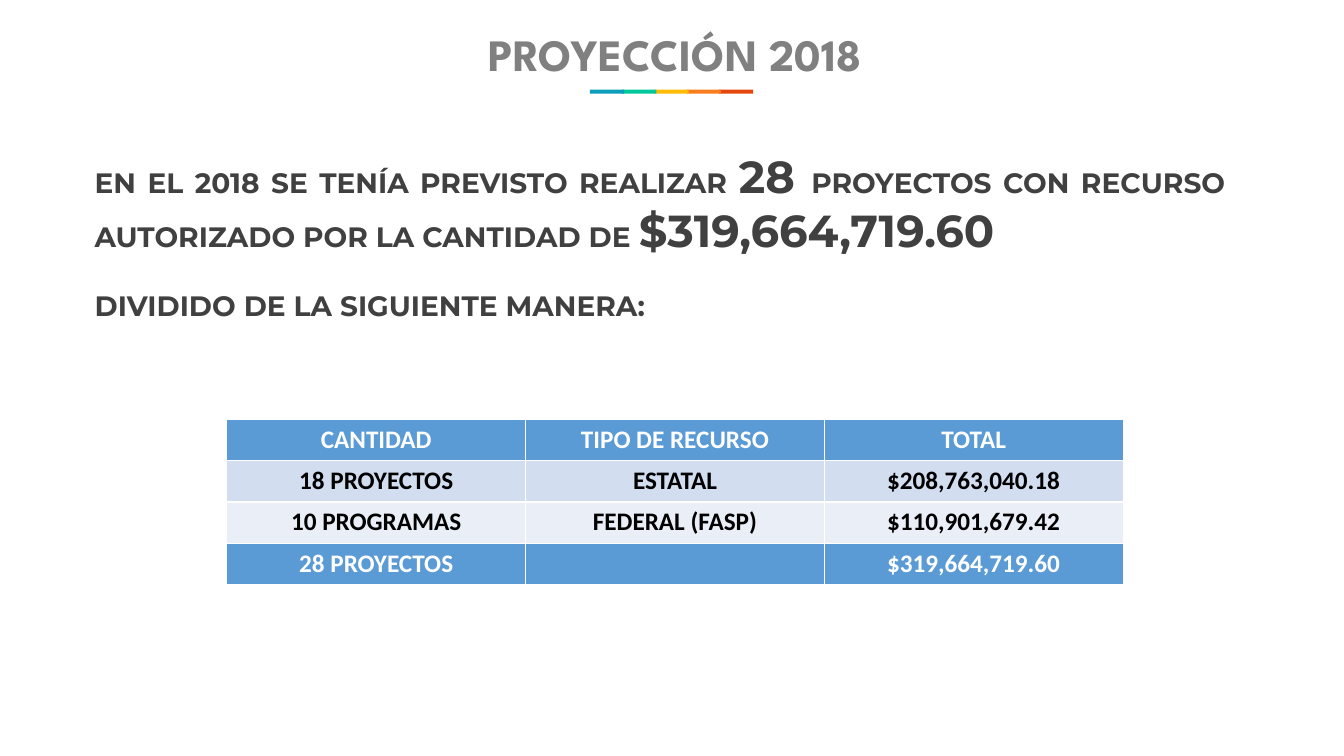
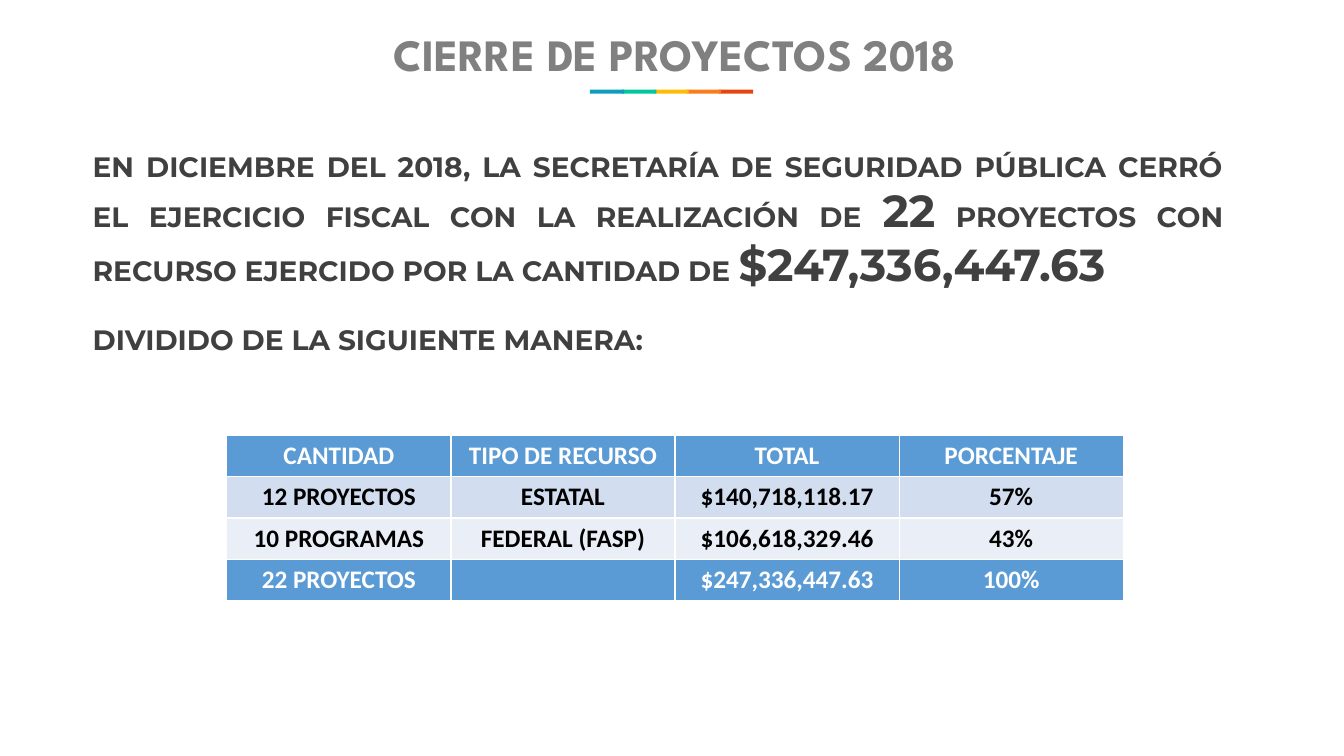
from pptx import Presentation
from pptx.dml.color import RGBColor
from pptx.enum.shapes import MSO_SHAPE
from pptx.enum.text import MSO_ANCHOR, PP_ALIGN
from pptx.util import Inches, Pt

RECTANGLE = MSO_SHAPE.RECTANGLE
MIDDLE = MSO_ANCHOR.MIDDLE
CENTER, JUSTIFY = PP_ALIGN.CENTER, PP_ALIGN.JUSTIFY

WHITE = RGBColor(0xFF, 0xFF, 0xFF)
BLACK = RGBColor(0x00, 0x00, 0x00)
TITLE_GRAY = RGBColor(0x80, 0x80, 0x80)
TEXT_GRAY = RGBColor(0x40, 0x40, 0x40)
TABLE_BLUE = RGBColor(0x5B, 0x9B, 0xD5)
ROW_TINTS = (RGBColor(0xD2, 0xDE, 0xEF), RGBColor(0xEA, 0xEF, 0xF7))
STRIPE_COLORS = (
    RGBColor(0x0D, 0x9E, 0xBB),
    RGBColor(0x00, 0xC8, 0x9D),
    RGBColor(0xFE, 0xBC, 0x07),
    RGBColor(0xF9, 0x7D, 0x1E),
    RGBColor(0xE5, 0x46, 0x0D),
)

TITLE_FONT, BODY_FONT, TABLE_FONT = "League Spartan", "Montserrat", "Calibri"
TITLE_SIZE, BODY_SIZE, FIGURE_SIZE, TABLE_SIZE = 32, 20, 32, 18
PARAGRAPH_GAP = 23

SLIDE_WIDTH, SLIDE_HEIGHT = 13.33, 7.5
STRIPE_LEFT, STRIPE_TOP, STRIPE_STEP = 5.85, 0.89, 0.32
STRIPE_WIDTH, STRIPE_HEIGHT = 0.34, 0.04
TABLE_LEFT, TABLE_WIDTH, ROW_HEIGHT = 2.25, 8.89, 0.41

HEADERS = ("CANTIDAD", "TIPO DE RECURSO", "TOTAL", "PORCENTAJE")
DIVISION_LINE = "DIVIDIDO DE LA SIGUIENTE MANERA:"


def style_run(run, font_name, size, color):
    run.font.name = font_name
    run.font.size = Pt(size)
    run.font.bold = True
    run.font.color.rgb = color


def add_text_box(slide, left, top, width, height):
    box = slide.shapes.add_textbox(
        Inches(left), Inches(top), Inches(width), Inches(height))
    box.text_frame.word_wrap = True
    return box.text_frame


def add_stripes(slide):
    """Colour bar under the title; each piece overlaps the one to its right."""
    for index, color in reversed(list(enumerate(STRIPE_COLORS))):
        stripe = slide.shapes.add_shape(
            RECTANGLE,
            Inches(STRIPE_LEFT + index * STRIPE_STEP), Inches(STRIPE_TOP),
            Inches(STRIPE_WIDTH), Inches(STRIPE_HEIGHT))
        stripe.shadow.inherit = False
        stripe.fill.solid()
        stripe.fill.fore_color.rgb = color
        stripe.line.fill.background()


def add_title(slide, title):
    frame = add_text_box(slide, 1.75, 0.05, 9.89, 0.97)
    frame.vertical_anchor = MIDDLE
    frame.text = title
    para = frame.paragraphs[0]
    para.alignment = CENTER
    style_run(para.runs[0], TITLE_FONT, TITLE_SIZE, TITLE_GRAY)


def add_summary(slide, left, height, pieces):
    """Write text and enlarged figures in turn, then the line before the table."""
    frame = add_text_box(slide, left, 1.43, 11.41, height)
    para = frame.paragraphs[0]
    para.alignment = JUSTIFY
    for index, piece in enumerate(pieces):
        run = para.add_run()
        run.text = piece
        style_run(run, BODY_FONT, FIGURE_SIZE if index % 2 else BODY_SIZE, TEXT_GRAY)

    division = frame.add_paragraph()
    division.text = DIVISION_LINE
    division.alignment = JUSTIFY
    division.space_before = Pt(PARAGRAPH_GAP)
    style_run(division.runs[0], BODY_FONT, BODY_SIZE, TEXT_GRAY)


def fill_cell(cell, text, fill, color):
    cell.fill.solid()
    cell.fill.fore_color.rgb = fill
    cell.text = text
    para = cell.text_frame.paragraphs[0]
    para.alignment = CENTER
    for run in para.runs:
        style_run(run, TABLE_FONT, TABLE_SIZE, color)


def add_resource_table(slide, top, body_rows):
    """Table whose header and last (total) rows are blue."""
    column_count = len(body_rows[0])
    rows = [HEADERS[:column_count], *body_rows]
    table = slide.shapes.add_table(
        len(rows), column_count, Inches(TABLE_LEFT), Inches(top),
        Inches(TABLE_WIDTH), Inches(ROW_HEIGHT * len(rows))).table
    for row_index, row in enumerate(rows):
        if row_index in (0, len(rows) - 1):
            fill, color = TABLE_BLUE, WHITE
        else:
            fill, color = ROW_TINTS[(row_index - 1) % len(ROW_TINTS)], BLACK
        for column_index, text in enumerate(row):
            fill_cell(table.cell(row_index, column_index), text, fill, color)


def add_page(deck, title):
    page = deck.slides.add_slide(deck.slide_layouts[6])
    add_stripes(page)
    add_title(page, title)
    return page


def main():
    deck = Presentation()
    deck.slide_width = Inches(SLIDE_WIDTH)
    deck.slide_height = Inches(SLIDE_HEIGHT)

    projection = add_page(deck, "PROYECCIÓN 2018")
    add_summary(projection, 0.84, 1.85, (
        "EN EL 2018 SE TENÍA PREVISTO REALIZAR ",
        "28 ",
        "PROYECTOS CON RECURSO AUTORIZADO POR LA CANTIDAD DE ",
        "$319,664,719.60",
    ))
    add_resource_table(projection, 4.16, (
        ("18 PROYECTOS", "ESTATAL", "$208,763,040.18"),
        ("10 PROGRAMAS", "FEDERAL (FASP)", "$110,901,679.42"),
        ("28 PROYECTOS", "", "$319,664,719.60"),
    ))

    closing = add_page(deck, "CIERRE DE PROYECTOS 2018")
    add_summary(closing, 0.82, 2.52, (
        "EN DICIEMBRE DEL 2018, LA SECRETARÍA DE SEGURIDAD PÚBLICA CERRÓ "
        "EL EJERCICIO FISCAL CON LA REALIZACIÓN DE ",
        "22",
        " PROYECTOS CON RECURSO EJERCIDO POR LA CANTIDAD DE ",
        "$247,336,447.63",
    ))
    add_resource_table(closing, 4.32, (
        ("12 PROYECTOS", "ESTATAL", "$140,718,118.17", "57%"),
        ("10 PROGRAMAS", "FEDERAL (FASP)", "$106,618,329.46", "43%"),
        ("22 PROYECTOS", "", "$247,336,447.63", "100%"),
    ))

    deck.save("out.pptx")


if __name__ == "__main__":
    main()
